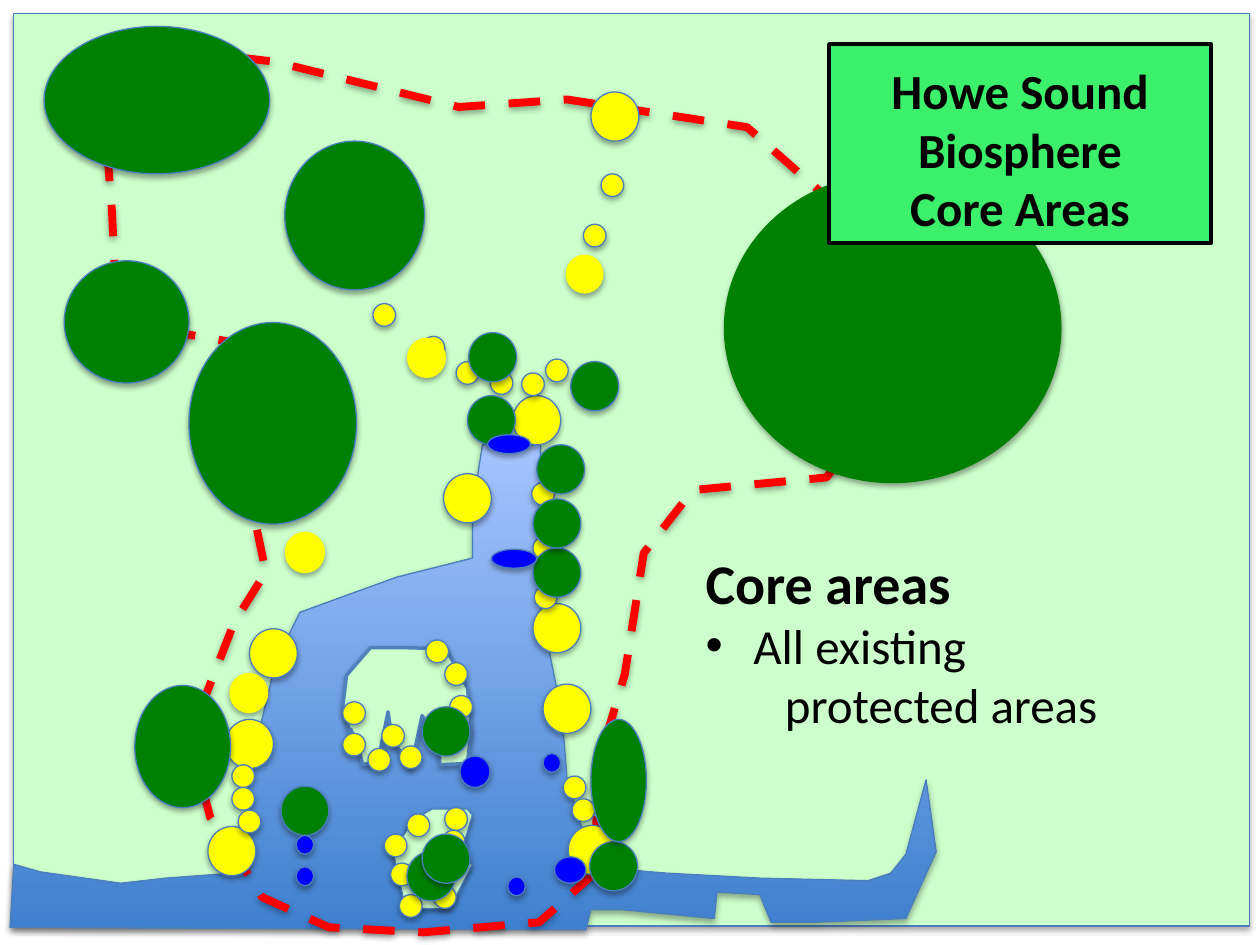
import dataclasses

import pptx
import pptx.dml.color
import pptx.enum.dml
import pptx.enum.shapes
import pptx.enum.text
import pptx.oxml
import pptx.oxml.ns
import pptx.util
from pptx.util import Inches


@dataclasses.dataclass(frozen=True)
class Theme:
    """Colours, font and sizes of the slide."""
    land: str = "CCFFCC"
    water_deep: str = "3F80CE"
    water_light: str = "A4C4FF"
    outline: str = "4B7EBC"
    island_outline: str = "4F81BD"
    boundary: str = "FF0000"
    yellow: str = "FFFF00"
    green: str = "008000"
    blue: str = "0000FF"
    title_fill: str = "3CF06B"
    ink: str = "000000"
    font: str = "Calibri"
    heading_size: int = 32
    text_size: int = 28
    thin: float = 0.75


THEME = Theme()

WATER = [
    (0.32, 6.92), (0.96, 7.01), (1.31, 6.97), (1.85, 6.93), (2, 6.88), (2, 6.75),
    (1.97, 6.17), (2.19, 5.25), (2.38, 4.86), (3.15, 4.58), (3.75, 4.43), (3.75, 4.03),
    (3.83, 3.53), (4.29, 3.53), (4.28, 4.03), (4.28, 4.78), (4.46, 5.67), (4.5, 6.18),
    (4.71, 6.88), (5.29, 6.93), (6.04, 6.97), (6.89, 6.99), (7.07, 6.93), (7.19, 6.78),
    (7.35, 6.19), (7.43, 6.76), (7.19, 7.29), (6.47, 7.32), (6.12, 7.32), (6.03, 7.1),
    (5.69, 7.08), (5.67, 7.29), (4.94, 7.22), (4.69, 7.22), (4.65, 7.38), (0.08, 7.36),
    (0.11, 6.86)]
NORTH_ISLAND = [
    (2.81, 5.93), (2.72, 5.61), (2.75, 5.36), (2.94, 5.14), (3.21, 5.14), (3.54, 5.15),
    (3.71, 5.46), (3.74, 5.78), (3.71, 6.06), (3.49, 6.07), (3.49, 5.89), (3.35, 5.68),
    (3.26, 6.1), (3.11, 5.86), (3.08, 5.65), (3, 6.04), (2.88, 6.07), (2.83, 5.89),
    (2.78, 5.78)]
SOUTH_ISLAND = [
    (3.71, 6.42), (3.43, 6.42), (3.28, 6.51), (3.12, 6.76), (3.22, 7.21), (3.57, 7.21),
    (3.75, 6.86), (3.6, 6.81), (3.69, 6.67), (3.75, 6.47)]
BOUNDARY = [
    (1.92, 6.86), (1.67, 6.49), (1.54, 6), (1.61, 5.58), (1.86, 4.94), (2.11, 4.54),
    (2, 4.01), (2.44, 3.57), (2.54, 3.17), (1.99, 2.74), (0.93, 2.56), (0.89, 1.69),
    (0.81, 0.68), (0.82, 0.33), (2.18, 0.49), (3.64, 0.85), (4.5, 0.79), (5.93, 1.01),
    (6.92, 1.88), (7.17, 2.99), (6.56, 3.79), (5.5, 3.89), (5.11, 4.39), (4.96, 5.35),
    (4.75, 6.06), (4.72, 6.93), (4.28, 7.32), (3.36, 7.4), (2.61, 7.36), (2.08, 7.12)]

MEDIUM, SMALL, TINY = (0.38, 0.39), (0.18, 0.18), (0.14, 0.15)
YELLOW_MEDIUM = [
    (4.51, 6.55), (4.07, 3.14), (4.31, 5.43), (1.79, 5.71), (1.65, 6.56), (4.69, 0.73),
    (4.23, 4.79), (3.52, 3.76), (1.98, 4.99)]
YELLOW_SMALL = [
    (4.33, 2.85), (3.23, 6.46), (3.05, 6.62), (3.1, 6.85), (3.17, 7.1), (3.44, 7.03),
    (3.53, 6.41), (3.51, 6.59), (4.47, 6.16), (4.54, 6.34), (4.14, 2.96), (3.38, 5.08),
    (2.72, 5.57), (2.72, 5.82), (2.92, 5.94), (3.53, 5.26), (3.57, 5.52), (3.03, 5.75),
    (3.17, 5.92), (1.84, 6.07), (1.84, 6.25), (1.89, 6.43), (4.63, 1.78), (4.77, 1.38),
    (3.62, 2.87), (3.35, 2.67), (2.96, 2.41), (3.89, 2.95), (4.22, 3.83), (4.23, 4.26),
    (4.24, 4.65)]
YELLOW_PLAIN = [
    (2.26, 4.22, 0.32, 0.33), (3.23, 2.68, 0.31, 0.32), (4.49, 2.02, 0.3, 0.31),
    (1.82, 5.34, 0.31, 0.32)]
GREEN_MEDIUM = [
    (4.68, 6.68), (3.23, 6.76), (3.35, 5.61), (3.71, 3.14), (4.26, 3.53), (4.23, 4.35),
    (4.23, 3.96), (3.72, 2.64), (3.35, 6.62), (2.23, 6.24), (4.53, 2.87)]
BLUE_TINY = [(4.31, 5.98), (4.03, 6.96), (2.35, 6.63), (2.35, 6.88)]
BLUE_OVALS = [
    (3.9, 4.36, 0.36, 0.15), (4.4, 6.8, 0.25, 0.21), (3.65, 6, 0.24, 0.25),
    (3.87, 3.45, 0.34, 0.15)]
GREEN_PARKS = [
    (1.5, 2.56, 1.33, 1.6), (0.35, 0.21, 1.79, 1.17), (2.26, 1.12, 1.11, 1.18),
    (0.51, 2.07, 0.99, 0.97), (4.69, 5.71, 0.44, 0.97), (1.07, 5.44, 0.76, 0.97)]


def rgb(value):
    """Turn a hex string into a colour."""
    return pptx.dml.color.RGBColor.from_string(value)


def style(shape, fill, line, width=THEME.thin):
    """Set fill, line and the soft shadow below a shape; None means empty."""
    for part, colour in ((shape.fill, fill), (shape.line.fill, line)):
        if colour:
            part.solid()
            part.fore_color.rgb = rgb(colour)
        else:
            part.background()
    if line:
        shape.line.width = pptx.util.Pt(width)
    shape.shadow.inherit = False
    effects = shape.element.spPr.find(pptx.oxml.ns.qn("a:effectLst"))
    effects.append(pptx.oxml.parse_xml(
        f'<a:outerShdw {pptx.oxml.ns.nsdecls("a")} blurRad="40000" dist="23000" '
        'dir="5400000" rotWithShape="0"><a:srgbClr val="000000">'
        '<a:alpha val="35000"/></a:srgbClr></a:outerShdw>'))


def add_outline(slide, box, points, fill, line, width=THEME.thin, close=True):
    """Draw a freeform through points measured from the box corner."""
    placed = [(Inches(box[0] + x), Inches(box[1] + y)) for x, y in points]
    builder = slide.shapes.build_freeform(*placed[0])
    builder.add_line_segments(placed[1:], close=close)
    outline = builder.convert_to_shape()
    style(outline, fill, line, width)
    return outline


def add_areas(slide, box, areas, fill, line=THEME.outline):
    """Draw ellipses given as left, top, width, height from the box corner."""
    for left, top, width, height in areas:
        area = slide.shapes.add_shape(
            pptx.enum.shapes.MSO_SHAPE.OVAL, Inches(box[0] + left),
            Inches(box[1] + top), Inches(width), Inches(height))
        style(area, fill, line)


def add_map(slide, box):
    """Draw land, water, islands and the biosphere boundary."""
    left, top, width, height = box
    land = slide.shapes.add_shape(
        pptx.enum.shapes.MSO_SHAPE.RECTANGLE, Inches(left + 0.11), Inches(top + 0.11),
        Inches(width - 0.19), Inches(height - 0.26))
    style(land, THEME.land, THEME.outline)
    water = add_outline(slide, box, WATER, THEME.water_deep, THEME.outline)
    water.fill.gradient()
    water.fill.gradient_angle = 90
    for stop, colour in zip(water.fill.gradient_stops,
                            (THEME.water_deep, THEME.water_light)):
        stop.color.rgb = rgb(colour)
    add_outline(slide, box, NORTH_ISLAND, THEME.land, THEME.island_outline, 2, False)
    add_outline(slide, box, SOUTH_ISLAND, THEME.land, THEME.outline)
    boundary = add_outline(slide, box, BOUNDARY, None, THEME.boundary, 4.5)
    boundary.line.dash_style = pptx.enum.dml.MSO_LINE.DASH


def add_protected_areas(slide, box):
    """Draw the yellow, green and blue areas from back to front."""
    add_areas(slide, box, [spot + MEDIUM for spot in YELLOW_MEDIUM], THEME.yellow)
    add_areas(slide, box, [spot + SMALL for spot in YELLOW_SMALL], THEME.yellow)
    add_areas(slide, box, YELLOW_PLAIN, THEME.yellow, None)
    add_areas(slide, box, [spot + MEDIUM for spot in GREEN_MEDIUM], THEME.green)
    add_areas(slide, box, [spot + TINY for spot in BLUE_TINY] + BLUE_OVALS, THEME.blue)
    add_areas(slide, box, [(5.75, 1.38, 2.67, 2.45)], THEME.green, THEME.green)
    add_areas(slide, box, GREEN_PARKS, THEME.green)


def place_text(slide, placeholder, box, text, anchor):
    """Move a placeholder to the front and the box, and fill in its text."""
    slide.shapes.element.append(placeholder.element)
    placeholder.left, placeholder.top, placeholder.width, placeholder.height = map(
        Inches, box)
    frame = placeholder.text_frame
    frame.text = text
    frame.word_wrap = True
    frame.auto_size = pptx.enum.text.MSO_AUTO_SIZE.NONE
    frame.vertical_anchor = anchor
    return frame.paragraphs


def format_text(paragraph, size, bold):
    """Set the type of one paragraph."""
    paragraph.space_before = pptx.util.Pt(0)
    for run in paragraph.runs:
        run.font.name, run.font.size, run.font.bold = THEME.font, pptx.util.Pt(size), bold
        run.font.color.rgb = rgb(THEME.ink)


def add_title(slide, box):
    """Place the boxed title."""
    title = slide.shapes.title
    for paragraph in place_text(slide, title, box, "Howe Sound\nBiosphere\nCore Areas",
                                pptx.enum.text.MSO_ANCHOR.BOTTOM):
        paragraph.alignment = pptx.enum.text.PP_ALIGN.CENTER
        format_text(paragraph, THEME.text_size, True)
    title.fill.solid()
    title.fill.fore_color.rgb = rgb(THEME.title_fill)
    title.line.color.rgb = rgb(THEME.ink)
    title.line.width = pptx.util.Pt(2.25)


def add_core_list(slide, box):
    """Place the heading and list of core areas."""
    paragraphs = place_text(slide, slide.placeholders[1], box,
                            "Core areas\nAll existing\nprotected areas",
                            pptx.enum.text.MSO_ANCHOR.TOP)
    rows = [(0, 0, None, THEME.heading_size), (0.38, -0.38, "•", THEME.text_size),
            (0.63, 0, None, THEME.text_size)]
    for paragraph, (margin, indent, bullet, size) in zip(paragraphs, rows):
        properties = paragraph._p.get_or_add_pPr()
        properties.set("marL", str(Inches(margin)))
        properties.set("indent", str(Inches(indent)))
        tag = f'a:buChar char="{bullet}"' if bullet else "a:buNone"
        properties.append(pptx.oxml.parse_xml(
            f'<{tag} {pptx.oxml.ns.nsdecls("a")}/>'))
        format_text(paragraph, size, size == THEME.heading_size)


def main():
    """Build and save the slide."""
    presentation = pptx.Presentation()
    presentation.slide_width, presentation.slide_height = Inches(10), Inches(7.5)
    slide = presentation.slides.add_slide(presentation.slide_layouts[1])
    map_box = (0, 0, 10, 7.5)
    add_map(slide, map_box)
    add_protected_areas(slide, map_box)
    add_core_list(slide, (5.5, 4.3, 3.35, 1.58))
    add_title(slide, (6.58, 0.35, 3.03, 1.58))
    presentation.save("out.pptx")


if __name__ == "__main__":
    main()
